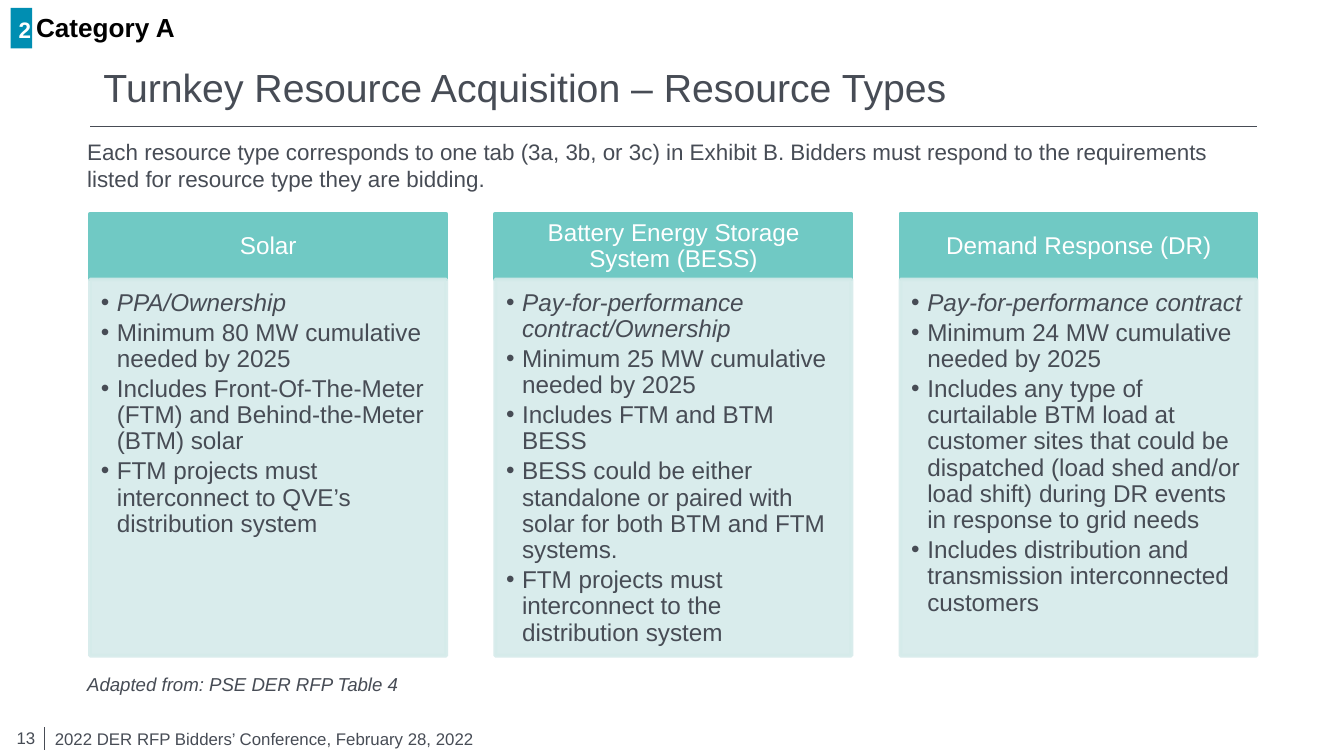
from lxml import etree
from pptx import Presentation
from pptx import util as u
from pptx.dml.color import RGBColor
from pptx.enum import shapes, text
from pptx.oxml.ns import qn

# Content
TITLE = "Turnkey Resource Acquisition – Resource Types"
CATEGORY_NUMBER, CATEGORY = "2", "Category A"
INTRO = ("Each resource type corresponds to one tab (3a, 3b, or 3c) in Exhibit B. "
         "Bidders must respond to the requirements listed for resource type they are bidding.")
RESOURCES = [
    ("Solar", [
        "PPA/Ownership",
        "Minimum 80 MW cumulative needed by 2025",
        "Includes Front-Of-The-Meter (FTM) and Behind-the-Meter (BTM) solar",
        "FTM projects must interconnect to QVE’s distribution system",
    ]),
    ("Battery Energy Storage System (BESS)", [
        "Pay-for-performance contract/Ownership",
        "Minimum 25 MW cumulative needed by 2025",
        "Includes FTM and BTM BESS",
        "BESS could be either standalone or paired with solar for both BTM and FTM systems.",
        "FTM projects must interconnect to the distribution system",
    ]),
    ("Demand Response (DR)", [
        "Pay-for-performance contract",
        "Minimum 24 MW cumulative needed by 2025",
        "Includes any type of curtailable BTM load at customer sites that could be dispatched "
        "(load shed and/or load shift) during DR events in response to grid needs",
        "Includes distribution and transmission interconnected customers",
    ]),
]
SOURCE = "Adapted from: PSE DER RFP Table 4"
PAGE, FOOTER = "13", "2022 DER RFP Bidders’ Conference, February 28, 2022"

THEME = {
    "font": "Arial",
    "ink": "474C55", "white": "FFFFFF", "black": "000000",
    "badge": "008EB2", "header": "70C9C4", "body": "D5EBEA",
    "title_size": 21, "category_size": 14, "card_size": 13,
    "text_size": 12, "source_size": 10, "footer_size": 9,
}
LEFT, RIGHT = 0.67, 9.35
CARD_WIDTH, CARD_TOP, HEADER_HEIGHT, BODY_HEIGHT = 2.65, 1.59, 0.49, 2.8
MIDDLE, TOP = text.MSO_ANCHOR.MIDDLE, text.MSO_ANCHOR.TOP
ALIGN = text.PP_ALIGN


def color(name):
    return RGBColor.from_string(THEME[name])


def add_bullet(paragraph):
    properties = paragraph._p.get_or_add_pPr()
    properties.set("marL", str(u.Inches(0.12)))
    properties.set("indent", str(u.Inches(-0.12)))
    etree.SubElement(properties, qn("a:buFont"), typeface=THEME["font"])
    etree.SubElement(properties, qn("a:buChar"), char="•")


def write(shape, lines, size, ink="ink", align=ALIGN.LEFT, anchor=TOP,
          insets=(0.1, 0.05, 0.1, 0.05), wrap=True, bold=False, italic=False,
          spacing=None, after=None, bullets=False):
    frame = shape.text_frame
    frame.text = "\n".join(lines)
    sides = ("margin_left", "margin_top", "margin_right", "margin_bottom")
    settings = dict(zip(sides, map(u.Inches, insets)))
    settings.update(word_wrap=wrap, vertical_anchor=anchor,
                    auto_size=text.MSO_AUTO_SIZE.NONE)
    for key, value in settings.items():
        setattr(frame, key, value)
    for number, paragraph in enumerate(frame.paragraphs):
        for key, value in {"alignment": align, "line_spacing": spacing,
                           "space_after": after}.items():
            setattr(paragraph, key, value)
        if bullets:
            add_bullet(paragraph)
        # The first bullet of a card names its contract type
        font = paragraph.runs[0].font
        for key, value in {"name": THEME["font"], "size": u.Pt(THEME[size]),
                           "bold": bold,
                           "italic": italic or (bullets and number == 0)}.items():
            setattr(font, key, value)
        font.color.rgb = color(ink)


def add_text(slide, box, line, size, **options):
    label = slide.shapes.add_textbox(*map(u.Inches, box))
    write(label, [line], size, **options)


def add_box(slide, box, fill, outlined=True, opacity=None):
    panel = slide.shapes.add_shape(shapes.MSO_SHAPE.RECTANGLE, *map(u.Inches, box))
    panel.shadow.inherit = False
    panel.fill.solid()
    panel.fill.fore_color.rgb = color(fill)
    if outlined:
        panel.line.color.rgb = color(fill)
        panel.line.width = u.Pt(2)
    else:
        panel.line.fill.background()
    if opacity:
        for tint in panel._element.spPr.iter(qn("a:srgbClr")):
            etree.SubElement(tint, qn("a:alpha"), val=str(opacity * 1000))
    return panel


def add_rule(slide, ends):
    rule = slide.shapes.add_connector(shapes.MSO_CONNECTOR.STRAIGHT, *map(u.Inches, ends))
    rule.line.color.rgb = color("ink")
    rule.line.width = u.Pt(0.75)
    etree.SubElement(rule._element.spPr, qn("a:effectLst"))


def main():
    # Widescreen page, 16:9
    deck = Presentation()
    deck.slide_width = u.Inches(10)
    deck.slide_height = deck.slide_width * 9 // 16
    slide = deck.slides.add_slide(deck.slide_layouts[5])

    # Title and rules
    title = slide.shapes.title
    title.left, title.top, title.width, title.height = map(u.Inches, (LEFT, 0.35, 8.69, 0.59))
    write(title, [TITLE], "title_size", anchor=MIDDLE)
    add_rule(slide, (LEFT, 0.94, RIGHT, 0.94))
    add_rule(slide, (0.33, 5.41, 0.33, 5.58))

    # Category tag
    badge = add_box(slide, (0.08, 0.06, 0.16, 0.3), "badge", outlined=False)
    write(badge, [CATEGORY_NUMBER], "text_size", ink="white", align=ALIGN.CENTER,
          anchor=MIDDLE, insets=(0.05, 0.02, 0, 0), wrap=False, bold=True)
    add_text(slide, (0.17, 0.08, 2.67, 0.24), CATEGORY, "category_size",
             ink="black", anchor=MIDDLE, bold=True)

    # Resource cards, spread evenly between the margins
    step = (RIGHT - LEFT - CARD_WIDTH) / (len(RESOURCES) - 1)
    for column, (resource, requirements) in enumerate(RESOURCES):
        left = LEFT + column * step
        header = add_box(slide, (left, CARD_TOP, CARD_WIDTH, HEADER_HEIGHT), "header")
        write(header, [resource], "card_size", ink="white", align=ALIGN.CENTER,
              anchor=MIDDLE, insets=(0.1, 0.06, 0.1, 0.06), spacing=0.9)
        body = add_box(slide, (left, CARD_TOP + HEADER_HEIGHT, CARD_WIDTH, BODY_HEIGHT),
                       "body", opacity=90)
        write(body, requirements, "card_size", insets=(0.08, 0.08, 0.1, 0.11),
              spacing=0.9, after=u.Pt(2), bullets=True)

    # Intro, source and footer
    add_text(slide, (0.55, 0.98, 8.69, 0.5), INTRO, "text_size")
    add_text(slide, (0.55, 4.96, 3.72, 0.27), SOURCE, "source_size", italic=True)
    add_text(slide, (-0.06, 5.32, 0.42, 0.34), PAGE, "footer_size",
             align=ALIGN.RIGHT, anchor=MIDDLE)
    add_text(slide, (0.31, 5.37, 4.84, 0.25), FOOTER, "footer_size")

    deck.save("out.pptx")


if __name__ == "__main__":
    main()
